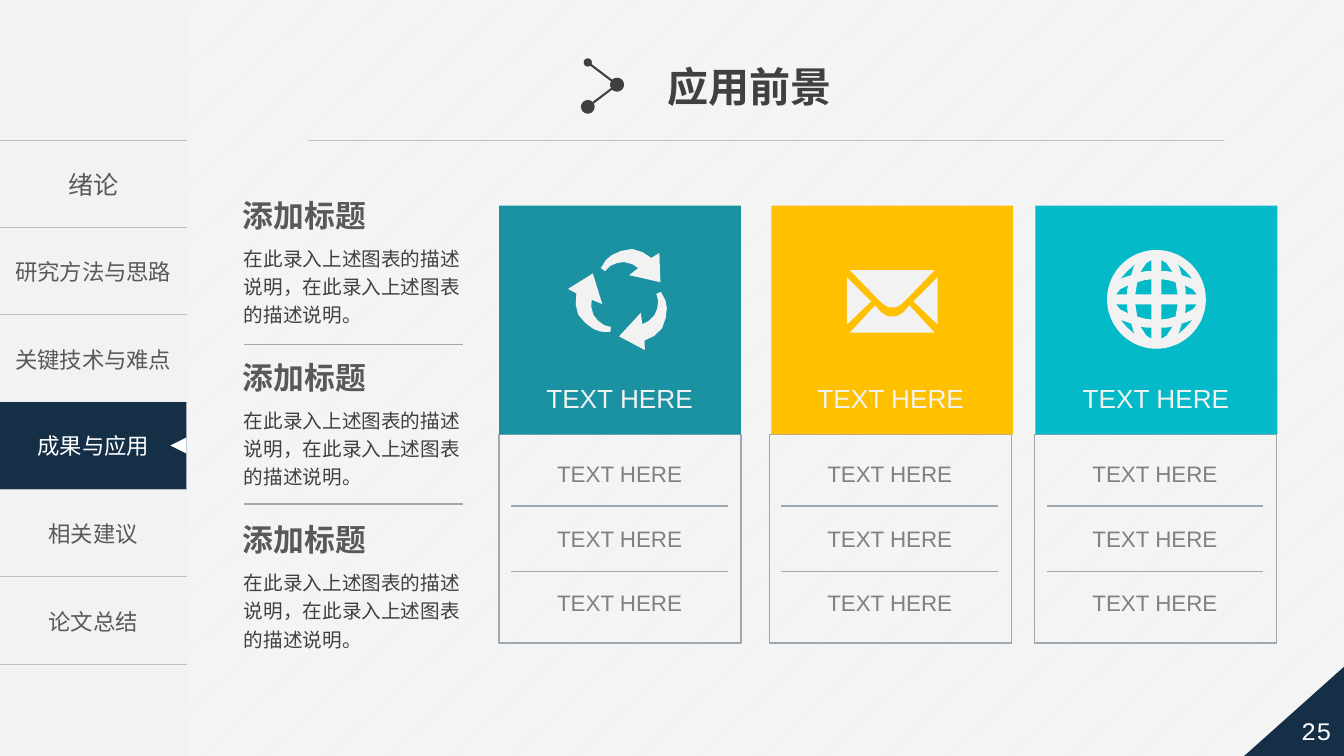
import math
from dataclasses import dataclass

from lxml import etree
from pptx import Presentation
from pptx.dml.color import RGBColor
from pptx.enum.dml import MSO_PATTERN
from pptx.enum.shapes import MSO_CONNECTOR, MSO_SHAPE
from pptx.enum.text import MSO_ANCHOR, PP_ALIGN
from pptx.oxml.ns import qn
from pptx.util import Inches, Pt

RECT, TRIANGLE, CORNER = MSO_SHAPE.RECTANGLE, MSO_SHAPE.ISOSCELES_TRIANGLE, MSO_SHAPE.RIGHT_TRIANGLE
STRAIGHT, DIAGONAL = MSO_CONNECTOR.STRAIGHT, MSO_PATTERN.LIGHT_UPWARD_DIAGONAL
LEFT, CENTER = PP_ALIGN.LEFT, PP_ALIGN.CENTER
TOP, MIDDLE = MSO_ANCHOR.TOP, MSO_ANCHOR.MIDDLE
CJK = "Noto Sans CJK SC"
UNITS_PER_INCH = 1000  # freeform points are whole numbers

COLORS = {
    "white": "FFFFFF", "paper": "F2F2F2", "rule": "BFBFBF", "navy": "152F47",
    "heading": "595959", "dark": "404040", "item": "808080", "frame": "9DA8B1",
    "teal": "1A92A2", "amber": "FFC000", "cyan": "05BAC8",
}

Point = tuple[float, float]
Contours = list[list[Point]]


@dataclass(frozen=True)
class TextStyle:
    size: float
    color: str
    font: str = CJK
    bold: bool = False
    align: PP_ALIGN = CENTER
    anchor: MSO_ANCHOR = TOP
    spacing: float = 1.0


@dataclass(frozen=True)
class Card:
    frame_left: float
    tile_left: float
    label_left: float
    color: str
    icon: Contours


NAV_FIRST = TextStyle(18, "heading", anchor=MIDDLE)
NAV = TextStyle(16, "heading", anchor=MIDDLE)
NAV_CURRENT = TextStyle(16, "white", anchor=MIDDLE)
PAGE_NUMBER = TextStyle(18, "white", "Courier New", anchor=MIDDLE)
TITLE = TextStyle(29.3, "dark", "Arial", True, LEFT)
HEADING = TextStyle(22, "heading", bold=True, align=LEFT)
BODY = TextStyle(14, "dark", align=LEFT, spacing=1.2)
ITEM = TextStyle(16, "item", "Arial")
TILE_LABEL = TextStyle(18.7, "paper", "Arial")


def rgb(name: str) -> RGBColor:
    return RGBColor.from_string(COLORS[name])


def write(frame, text: str, style: TextStyle) -> None:
    paragraph = frame.paragraphs[0]
    for name, value in {"alignment": style.align, "line_spacing": style.spacing}.items():
        setattr(paragraph, name, value)
    run = paragraph.add_run()
    run.text = text
    for name, value in {"size": Pt(style.size), "bold": style.bold, "name": style.font}.items():
        setattr(run.font, name, value)
    run.font.color.rgb = rgb(style.color)
    etree.SubElement(run.font._element, qn("a:ea")).set("typeface", CJK)


def add_text(slide, box: tuple, text: str, style: TextStyle, wrap: bool = True) -> None:
    frame = slide.shapes.add_textbox(*map(Inches, box)).text_frame
    frame.word_wrap = wrap
    frame.vertical_anchor = style.anchor
    write(frame, text, style)


def paint(shape, fill: str | None, outline: str | None = None) -> None:
    shape.shadow.inherit = False
    if fill:
        shape.fill.solid()
        shape.fill.fore_color.rgb = rgb(fill)
    else:
        shape.fill.background()
    if outline:
        shape.line.color.rgb = rgb(outline)
        shape.line.width = Pt(1)
    else:
        shape.line.fill.background()


def add_box(slide, kind, box: tuple, fill: str | None, outline: str | None = None):
    shape = slide.shapes.add_shape(kind, *map(Inches, box))
    paint(shape, fill, outline)
    return shape


def add_line(slide, start: Point, end: Point, color: str, width: float,
             dots: tuple[str, ...] = ()) -> None:
    line = slide.shapes.add_connector(STRAIGHT, *map(Inches, start + end))
    line.line.color.rgb = rgb(color)
    line.line.width = Pt(width)
    for tag, size in zip(("a:headEnd", "a:tailEnd"), dots):
        etree.SubElement(line.line._get_or_add_ln(), qn(tag), type="oval", w=size, len=size)
    etree.SubElement(line._element.spPr, qn("a:effectLst"))


def add_icon(slide, contours: Contours) -> None:
    first, *others = [[(round(x * UNITS_PER_INCH), round(y * UNITS_PER_INCH)) for x, y in contour]
                      for contour in contours]
    builder = slide.shapes.build_freeform(*first[0], scale=Inches(1) / UNITS_PER_INCH)
    builder.add_line_segments(first[1:])
    for contour in others:
        builder.move_to(*contour[0])
        builder.add_line_segments(contour[1:])
    paint(builder.convert_to_shape(), "paper")


def recycle_icon() -> Contours:
    cx, cy = 6.19, 2.95
    arrow = [(6.54, 2.51), (6.46, 2.56), (6.37, 2.5), (6.27, 2.47), (6.16, 2.49), (6.07, 2.53),
             (6.01, 2.58), (5.96, 2.66), (6, 2.69), (6.05, 2.64), (6.12, 2.61), (6.19, 2.6),
             (6.27, 2.62), (6.33, 2.66), (6.24, 2.73), (6.55, 2.8)]
    turns = [(math.cos(k * math.tau / 3), math.sin(k * math.tau / 3)) for k in range(3)]
    return [[(cx + (x - cx) * c - (y - cy) * s, cy + (x - cx) * s + (y - cy) * c)
             for x, y in arrow] for c, s in turns]


def envelope_icon() -> Contours:
    axis = 8.85
    side = [(8.4, 2.75), (8.4, 3.22), (8.64, 2.99)]
    flap = [(8.43, 2.68), (8.68, 2.94), (8.74, 3), (8.78, 3.03), (8.82, 3.05)]
    base = [(8.43, 3.3), (8.68, 3.03), (8.74, 3.1), (8.79, 3.13), (8.82, 3.14)]

    def mirror(points: list[Point]) -> list[Point]:
        return [(2 * axis - x, y) for x, y in points]

    return [side, mirror(side), *(half + mirror(half)[::-1] for half in (flap, base))]


def globe_icon() -> Contours:
    cx, cy, radius, steps = 11.47, 2.97, 0.49, 72
    # Gaps in one quarter, measured from the centre
    gaps = [
        [(0.05, 0.39), (0.05, 0.28), (0.1, 0.28), (0.16, 0.27), (0.14, 0.3), (0.1, 0.36)],
        [(0.05, 0.2), (0.05, 0.05), (0.21, 0.05), (0.2, 0.11), (0.19, 0.17), (0.12, 0.19)],
        [(0.29, 0.05), (0.4, 0.05), (0.36, 0.1), (0.28, 0.14), (0.29, 0.1)],
        [(0.25, 0.24), (0.34, 0.21), (0.36, 0.2), (0.29, 0.28), (0.21, 0.35), (0.23, 0.31)],
    ]
    rim = [(cx + radius * math.cos(k * math.tau / steps), cy + radius * math.sin(k * math.tau / steps))
           for k in range(steps)]
    return [rim] + [[(cx + sx * x, cy + sy * y) for x, y in gap]
                    for gap in gaps for sx in (-1, 1) for sy in (-1, 1)]


def add_navigation(slide) -> None:
    chapters = ["绪论", "研究方法与思路", "关键技术与难点", "", "相关建议", "论文总结"]
    add_box(slide, RECT, (0, 0, 1.85, 7.5), "paper")
    table = slide.shapes.add_table(len(chapters), 1, *map(Inches, (0, 1.39, 1.85, 5.2))).table
    for name in ("first_row", "horz_banding"):
        setattr(table, name, False)
    for row, chapter in enumerate(chapters):
        cell = table.cell(row, 0)
        for name, value in {"vertical_anchor": MIDDLE, "margin_left": 0, "margin_right": 0}.items():
            setattr(cell, name, value)
        if chapter:
            write(cell.text_frame, chapter, NAV if row else NAV_FIRST)
        properties = cell._tc.get_or_add_tcPr()
        for tag in ("a:lnL", "a:lnR"):
            etree.SubElement(etree.SubElement(properties, qn(tag)), qn("a:noFill"))
        for tag in ("a:lnT", "a:lnB"):
            border = etree.SubElement(properties, qn(tag), w=str(Pt(1)))
            solid = etree.SubElement(border, qn("a:solidFill"))
            etree.SubElement(solid, qn("a:srgbClr"), val=COLORS["rule"])
        cell.fill.background()
    # Current chapter
    current = add_box(slide, RECT, (0, 3.99, 1.85, 0.86), "navy")
    current.text_frame.vertical_anchor = MIDDLE
    write(current.text_frame, "成果与应用", NAV_CURRENT)
    add_box(slide, TRIANGLE, (1.69, 4.34, 0.16, 0.16), "white").rotation = 270


def add_card(slide, card: Card) -> None:
    inner = card.frame_left + 0.12
    for row in range(3):
        add_text(slide, (inner, 4.52 + 0.64 * row, 2.15, 0.4), "TEXT HERE", ITEM)
    add_box(slide, RECT, (card.frame_left, 4.31, 2.4, 2.07), None, "frame")
    for y in (5.02, 5.67):
        add_line(slide, (inner, y), (inner + 2.15, y), "frame", 1)
    add_box(slide, RECT, (card.tile_left, 2.04, 2.4, 2.27), card.color)
    add_icon(slide, card.icon)
    add_text(slide, (card.label_left, 3.74, 2.15, 0.45), "TEXT HERE", TILE_LABEL)


def main() -> None:
    deck = Presentation()
    deck.slide_width, deck.slide_height = Inches(13.33), Inches(7.5)
    slide = deck.slides.add_slide(deck.slide_layouts[6])
    backdrop = slide.background.fill
    backdrop.patterned()
    backdrop.pattern = DIAGONAL
    backdrop.fore_color.rgb, backdrop.back_color.rgb = rgb("white"), rgb("paper")

    add_navigation(slide)

    # Page corner
    corner = add_box(slide, CORNER, (12.33, 6.58, 1.04, 0.93), "navy")
    corner._element.spPr.find(qn("a:xfrm")).set("flipH", "1")
    add_text(slide, (12.78, 6.97, 0.55, 0.55), "25", PAGE_NUMBER, wrap=False)

    # Title
    add_line(slide, (3.05, 1.39), (12.14, 1.39), "rule", 0.5)
    add_text(slide, (6.52, 0.56, 1.85, 0.59), "应用前景", TITLE, wrap=False)
    add_line(slide, (5.83, 0.62), (6.12, 0.84), "dark", 1.5, ("med", "lg"))
    add_line(slide, (6.12, 0.84), (5.83, 1.06), "dark", 1.5, ("lg", "lg"))

    # Descriptions
    for y in (3.42, 5):
        add_line(slide, (2.42, y), (4.59, y), "frame", 1)
    for row in range(3):
        y = 1.9 + 1.61 * row
        add_text(slide, (2.31, y, 1.61, 0.47), "添加标题", HEADING)
        add_text(slide, (2.32, y + 0.45, 2.48, 0.95),
                 "在此录入上述图表的描述说明，在此录入上述图表的描述说明。", BODY)

    # Cards
    for card in (Card(4.95, 4.95, 5.07, "teal", recycle_icon()),
                 Card(7.63, 7.65, 7.76, "amber", envelope_icon()),
                 Card(10.26, 10.27, 10.39, "cyan", globe_icon())):
        add_card(slide, card)

    deck.save("out.pptx")


if __name__ == "__main__":
    main()
